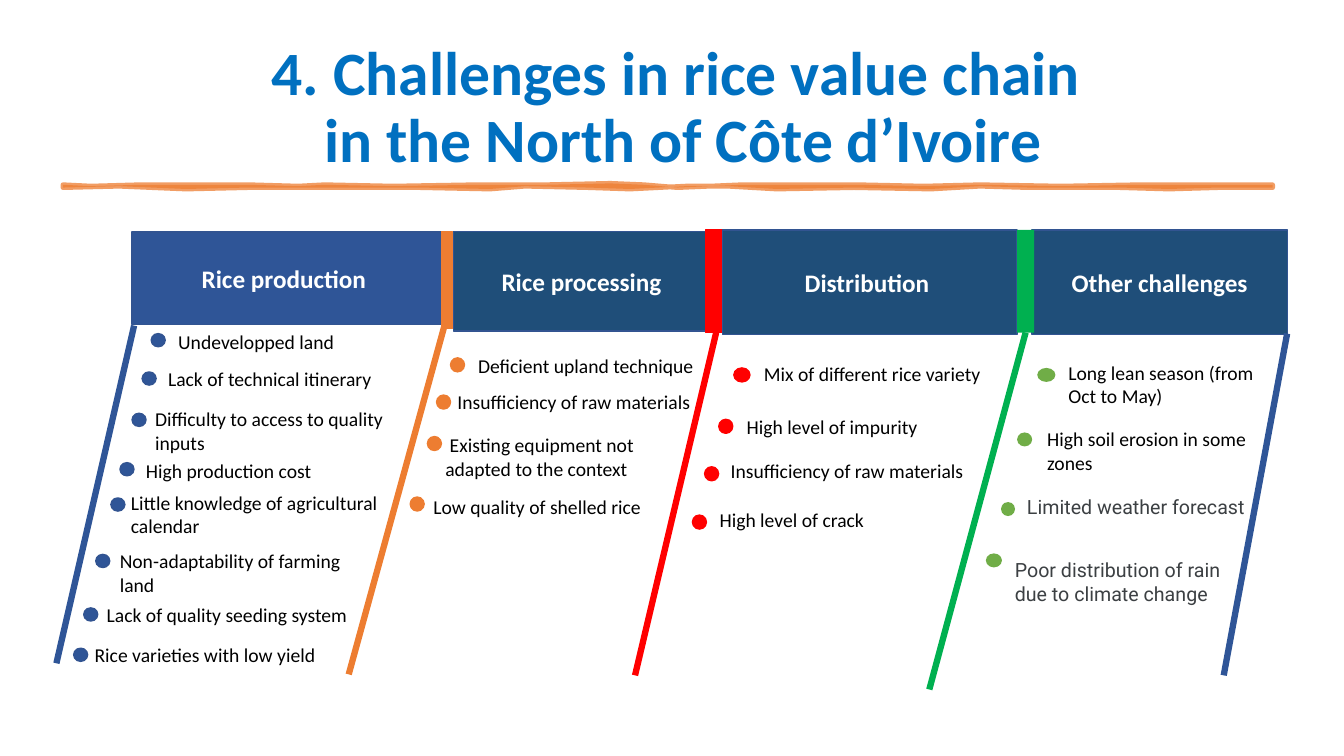
from lxml import etree
from pptx import Presentation
from pptx import util as u
from pptx.dml.color import RGBColor
from pptx.enum import shapes, text
from pptx.oxml import ns

BLACK = RGBColor(0x00, 0x00, 0x00)
WHITE = RGBColor(0xFF, 0xFF, 0xFF)
GREY = RGBColor(0x3C, 0x40, 0x43)
TITLE_BLUE = RGBColor(0x00, 0x70, 0xC0)
BLUE = RGBColor(0x2F, 0x55, 0x97)
NAVY = RGBColor(0x1F, 0x4E, 0x79)
EDGE = RGBColor(0x32, 0x54, 0x91)
ORANGE = RGBColor(0xED, 0x7D, 0x31)
RED = RGBColor(0xFF, 0x00, 0x00)
GREEN = RGBColor(0x00, 0xB0, 0x50)
LEAF = RGBColor(0x70, 0xAD, 0x47)

# Each challenge: text, dot (left, top, width), text (left, top, width), font, colour
PRODUCTION = [
    ("Undevelopped land", (108, 238.3, 10), (120.2, 231.8, 199)),
    ("Lack of technical itinerary", (101.5, 265.7, 10), (113, 258.5, 199)),
    ("Difficulty to access to quality inputs", (94.3, 295.2, 10), (103.7, 287.3, 199)),
    ("High production cost", (85.7, 330.5, 10), (97.2, 324, 199)),
    ("Little knowledge of agricultural calendar", (79.2, 355.7, 10), (86.4, 347, 199)),
    ("Non-adaptability of farming land", (68.4, 396, 10), (78.5, 388.8, 199)),
    ("Lack of quality seeding system", (59.8, 434.2, 10), (69.1, 427, 199)),
    ("Rice varieties with low yield", (52.6, 463, 10), (60.5, 455.8, 199)),
]
PROCESSING = [
    ("Deficient upland technique", (321.8, 255.6, 10), (334.4, 249.1, 230)),
    ("Insufficiency of raw materials", (311.8, 282.2, 10), (319.7, 275, 188)),
    (" Existing equipment not\nadapted to the context", (305.3, 311.8, 10), (311, 306, 242)),
    ("Low quality of shelled rice", (293, 355, 10), (302.5, 349.9, 189)),
]
DISTRIBUTION = [
    ("Mix of different rice variety", (524.2, 262.8, 11.5), (538.6, 254.9, 174)),
    ("High level of impurity", (513.4, 299.5, 10), (526.3, 293, 145)),
    ("Insufficiency of raw materials", (503.3, 333.4, 10), (514.8, 324, 182)),
    ("High level of crack", (494.6, 367.9, 10), (506.9, 359.3, 146)),
]
OTHER = [
    ("Long lean season (from Oct to May)", (740.9, 262.8, 13), (756, 254.2, 167)),
    ("High soil erosion in some zones", (726.5, 308.9, 10.8), (740.9, 301.7, 173)),
    ("Limited weather forecast", (715, 358.6, 10), (726.5, 349.9, 181), "Roboto", GREY),
    ("Poor distribution of rain due to climate change",
     (704.2, 395.3, 11.5), (717.8, 395.3, 167), "Roboto", GREY),
]

# Brush stroke under the title: x along the edge, y off the edge
STROKE_TOP, STROKE_BOTTOM = 132.5, 133.9
UPPER_EDGE = [(45.4, 0), (65, 0.2), (100, -0.3), (140, 0), (178, -0.8), (213, 0.6),
              (232, -0.3), (281, 0.2), (340, -0.4), (390, -0.3), (436, -1.6),
              (460, 0), (484, 1.4), (530, -0.2), (613, 0), (660, 0.5), (700, -0.7),
              (758, 0.3), (814, -0.3), (860, 0), (909, 0)]
LOWER_EDGE = [(909, 0), (870, 0.2), (835, 1.1), (800, 0.4), (735, -0.3), (700, -0.8),
              (665, 0.9), (610, 0), (555, 1.1), (520, -0.9), (490, -0.8), (450, 1),
              (420, 0.3), (375, -0.8), (350, 0.7), (300, 0), (240, 0.4), (177, 0.3),
              (133, 1), (85, -0.9), (45.4, 0)]


class SlideBuilder:
    """Holds the page and the shared text style."""

    def __init__(self, page):
        self.page = page
        self.font = "Calibri"
        self.body_size = 14

    def add_words(self, frame, words, size, color, bold=False, align=None, font=None):
        """Fills a frame: a newline starts a paragraph, a vertical tab a line."""
        for number, line in enumerate(words.split("\n")):
            para = frame.paragraphs[0] if number == 0 else frame.add_paragraph()
            para.alignment = align
            for part_number, part in enumerate(line.split("\v")):
                if part_number:
                    para.add_line_break()
                span = para.add_run()
                span.text = part
                span.font.name = font or self.font
                span.font.size = u.Pt(size)
                span.font.bold = bold
                span.font.color.rgb = color

    def textbox(self, words, left, top, width, height, size, color, **style):
        box = self.page.shapes.add_textbox(u.Pt(left), u.Pt(top), u.Pt(width), u.Pt(height))
        box.text_frame.word_wrap = True
        self.add_words(box.text_frame, words, size, color, **style)
        return box

    def shape(self, kind, left, top, width, height, fill, edge=None):
        shape = self.page.shapes.add_shape(
            kind, u.Pt(left), u.Pt(top), u.Pt(width), u.Pt(height))
        self.paint(shape, fill, edge, 1)
        return shape

    def paint(self, shape, fill, edge, weight):
        shape.shadow.inherit = False
        shape.fill.solid()
        shape.fill.fore_color.rgb = fill
        if edge is None:
            shape.line.fill.background()
        else:
            shape.line.color.rgb = edge
            shape.line.width = u.Pt(weight)

    def bar(self, *place, fill, edge=None):
        return self.shape(shapes.MSO_SHAPE.RECTANGLE, *place, fill, edge)

    def header(self, words, *place, fill):
        box = self.bar(*place, fill=fill, edge=EDGE)
        box.text_frame.word_wrap = True
        box.text_frame.vertical_anchor = text.MSO_ANCHOR.MIDDLE
        self.add_words(box.text_frame, words, 18, WHITE, bold=True,
                       align=text.PP_ALIGN.CENTER)

    def slant(self, start, end, color, bar=None):
        """Draws a divider, joined to the foot of its bar when one is given."""
        line = self.page.shapes.add_connector(
            shapes.MSO_CONNECTOR.STRAIGHT, *[u.Pt(value) for value in start + end])
        if bar is not None:
            line.begin_connect(bar, 2)
        line.line.color.rgb = color
        line.line.width = u.Pt(4.5)
        etree.SubElement(line._element.spPr, ns.qn("a:effectLst"))

    def challenges(self, items, fill, edge, dot_height):
        for words, (dot_x, dot_y, dot_width), (left, top, width), *style in items:
            font, color = style or (self.font, BLACK)
            self.shape(shapes.MSO_SHAPE.OVAL, dot_x, dot_y, dot_width, dot_height, fill, edge)
            self.textbox(words, left, top, width, 24.5, self.body_size, color, font=font)

    def brush_stroke(self, color):
        points = [(x, STROKE_TOP + y) for x, y in UPPER_EDGE]
        points += [(x, STROKE_BOTTOM + y) for x, y in LOWER_EDGE]
        outline = self.page.shapes.build_freeform(*points[0], scale=u.Pt(1))
        outline.add_line_segments(points[1:], close=True)
        stroke = outline.convert_to_shape()
        self.paint(stroke, color, color, 3.5)
        properties = stroke._element.spPr
        for tint in properties.iter(ns.qn("a:srgbClr")):
            etree.SubElement(tint, ns.qn("a:alpha"), val="75000")
        etree.SubElement(properties.find(ns.qn("a:ln")), ns.qn("a:round"))


def main():
    deck = Presentation()
    deck.slide_width, deck.slide_height = u.Pt(960), u.Pt(540)
    builder = SlideBuilder(deck.slides.add_slide(deck.slide_layouts[6]))

    builder.brush_stroke(ORANGE)
    title = builder.textbox(
        "4. Challenges in rice value chain \vin the North of Côte d’Ivoire",
        53.3, 28.1, 869.8, 99.4, 44, TITLE_BLUE, bold=True, align=text.PP_ALIGN.CENTER)
    title.text_frame.vertical_anchor = text.MSO_ANCHOR.MIDDLE
    title.text_frame.paragraphs[0].line_spacing = 0.9

    builder.header("Rice production ", 94.3, 165.6, 221, 66.2, fill=BLUE)
    builder.header("Rice processing", 324, 165.2, 182.9, 71.3, fill=NAVY)
    builder.bar(315.4, 165.6, 7.9, 69.1, fill=ORANGE, edge=ORANGE)
    red_bar = builder.bar(504, 164.2, 15.1, 73.4, fill=RED, edge=RED)
    builder.header("Other challenges", 737.3, 164.2, 182.2, 74.9, fill=NAVY)
    builder.header("Distribution ", 516.2, 164.2, 210.2, 74.9, fill=NAVY)
    green_bar = builder.bar(726.5, 164.2, 12.2, 73.4, fill=GREEN)

    builder.slant((95.8, 232.6), (40.3, 473.8), BLUE)
    builder.slant((317.5, 232.6), (249.1, 481.7), ORANGE)
    builder.slant((511.6, 237.6), (453.6, 482.4), RED, red_bar)
    builder.slant((732.6, 237.6), (663.8, 492.5), GREEN, green_bar)
    builder.slant((919.4, 238.3), (874.1, 482.4), BLUE)

    builder.challenges(PRODUCTION, BLUE, EDGE, 9.4)
    builder.challenges(PROCESSING, ORANGE, ORANGE, 10)
    builder.challenges(DISTRIBUTION, RED, RED, 10)
    builder.challenges(OTHER, LEAF, None, 10)
    deck.save("out.pptx")


if __name__ == "__main__":
    main()
